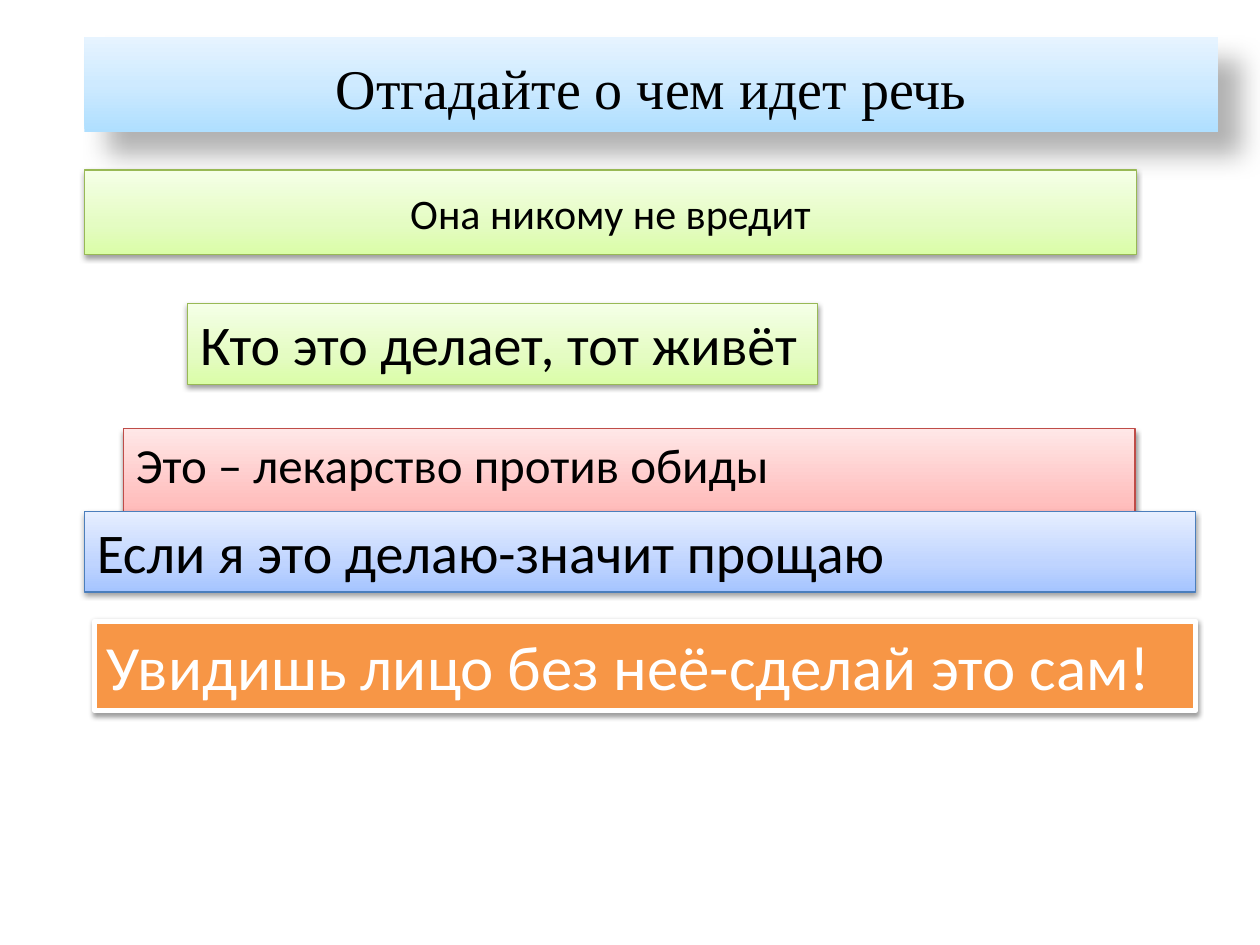
from copy import deepcopy
from pptx import Presentation
from pptx.dml.color import RGBColor
from pptx.enum.shapes import MSO_SHAPE
from pptx.enum.text import MSO_ANCHOR, PP_ALIGN
from pptx.oxml import parse_xml
from pptx.oxml.ns import nsdecls, qn
from pptx.util import Inches, Pt

THEME = {
    "sky": {"fill": ((0, "AFDFFF"), (50, "CEEAFF"), (100, "E7F4FF")), "line": None},
    "lime": {"fill": ((0, "DAFDA7"), (35, "E4FCC2"), (100, "F5FFE7")), "line": ("98B955", 0.75)},
    "rose": {"fill": ((0, "FFA6A5"), (35, "FFC0BF"), (100, "FFE7E7")), "line": ("BF4C48", 0.75)},
    "blue": {"fill": ((0, "A4C4FF"), (35, "BFD4FF"), (100, "E6EEFF")), "line": ("4B7EBC", 0.75)},
    "gold": {"fill": "F79646", "line": ("FFFFFF", 3)},
    "ink": "000000", "white": "FFFFFF",
    "head": 32, "small": 24, "mid": 28, "large": 32, "huge": 36,
    "serif": "Times New Roman", "sans": "Calibri",
    "deep": (30, 15, 18, 45), "soft": (38, 3.1, 1.6, 90),
}

CARDS = [
    ("Отгадайте о чем идет речь", (0.67, 0.29, 9, 0.76), "sky",
     {"size": "head", "font": "serif", "mid": True, "top": 0.1}),
    ("Она никому не вредит", (0.67, 1.35, 8.35, 0.67), "lime", {"size": "small", "mid": True}),
    ("Кто это делает, тот живёт", (1.49, 2.41, 5, 0.64), "lime", {"size": "large"}),
    ("Это – лекарство против обиды", (0.98, 3.4, 8.03, 0.88), "rose", {"size": "mid"}),
    ("Если я это делаю-значит прощаю", (0.67, 4.06, 8.82, 0.64), "blue", {"size": "large"}),
    ("Увидишь лицо без неё-сделай это сам!", (0.75, 4.93, 8.74, 0.71), "gold",
     {"size": "huge", "color": "white"}),
]


def write(shape, text, size, font="sans", color="ink", mid=False, top=0.05):
    frame = shape.text_frame
    frame.word_wrap = True
    frame.margin_top = Inches(top)
    frame.vertical_anchor = MSO_ANCHOR.MIDDLE if mid else MSO_ANCHOR.TOP
    para = frame.paragraphs[0]
    para.text = text
    para.alignment = PP_ALIGN.CENTER if mid else PP_ALIGN.LEFT
    para.font.size = Pt(THEME[size])
    para.font.name = THEME[font]
    para.font.color.rgb = RGBColor.from_string(THEME[color])


def paint(shape, fill, line):
    if isinstance(fill, str):
        shape.fill.solid()
        shape.fill.fore_color.rgb = RGBColor.from_string(fill)
    else:
        shape.fill.gradient()
        shape.fill.gradient_angle = 90
        stops = shape.element.spPr.find(".//" + qn("a:gsLst"))
        stops.append(deepcopy(stops[0]))
        for stop, (place, color) in zip(shape.fill.gradient_stops, fill):
            stop.position = place / 100
            stop.color.rgb = RGBColor.from_string(color)
    if line:
        shape.line.color.rgb = RGBColor.from_string(line[0])
        shape.line.width = Pt(line[1])
    else:
        shape.line.fill.background()


def shade(shape, alpha, blur, dist, angle):
    shape.shadow.inherit = False
    shape.element.spPr.find(qn("a:effectLst")).append(parse_xml(
        f'<a:outerShdw {nsdecls("a")} blurRad="{Pt(blur)}" dist="{Pt(dist)}" '
        f'dir="{angle * 60000}" algn="ctr" rotWithShape="0"><a:srgbClr val="{THEME["ink"]}">'
        f'<a:alpha val="{alpha * 1000}"/></a:srgbClr></a:outerShdw>'))


def main():
    """Build the riddle slide."""
    deck = Presentation()
    deck.slide_width, deck.slide_height = Inches(10), Inches(7.5)
    slide = deck.slides.add_slide(deck.slide_layouts[6])
    for text, box, style, form in CARDS:
        card = slide.shapes.add_shape(MSO_SHAPE.RECTANGLE, *map(Inches, box))
        paint(card, **THEME[style])
        shade(card, *THEME["deep" if style == "sky" else "soft"])
        write(card, text, **form)
    deck.save("out.pptx")


if __name__ == "__main__":
    main()
